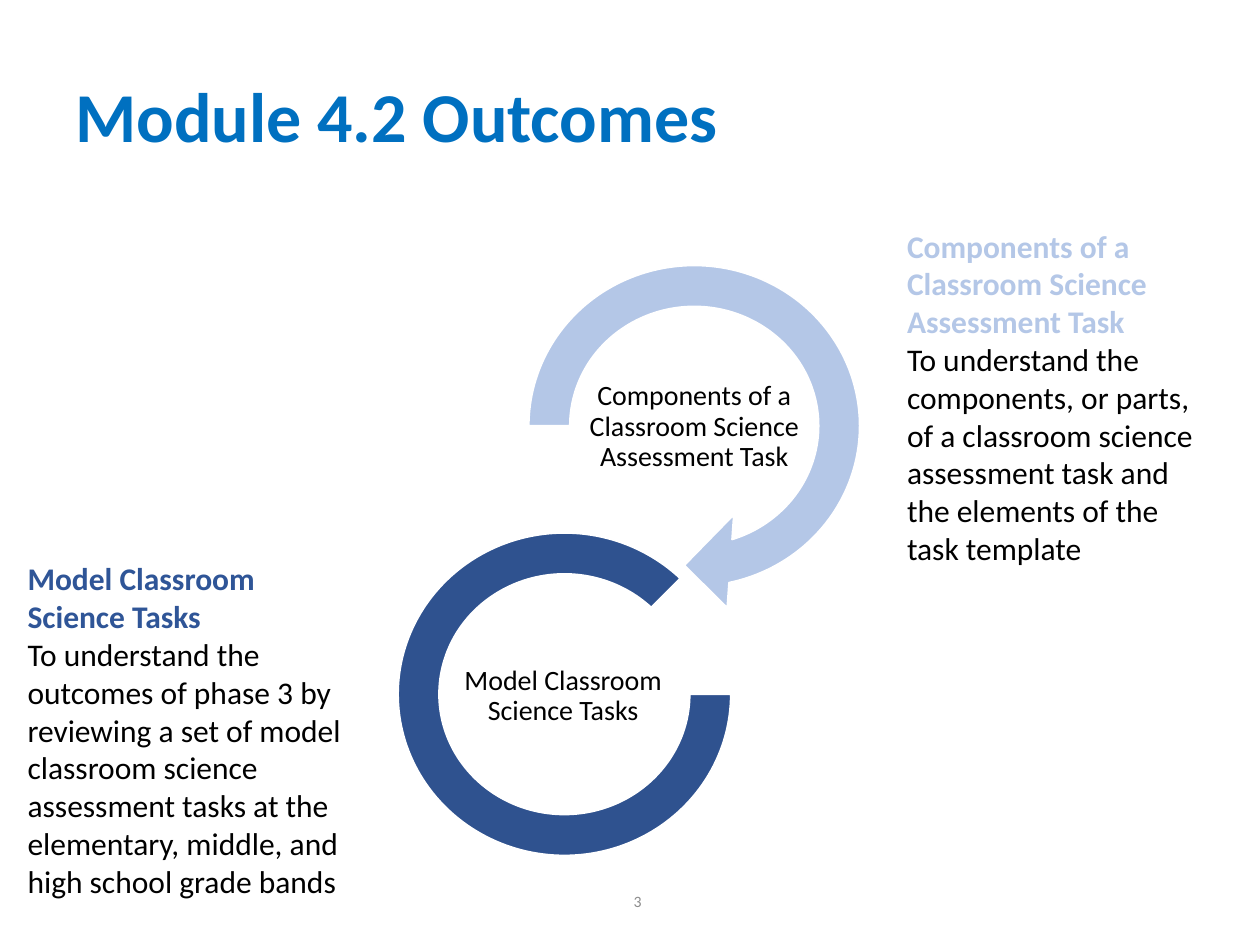
import pptx
import pptx.util
import pptx.dml.color
import pptx.enum.shapes
import pptx.enum.text

Inches, Pt = pptx.util.Inches, pptx.util.Pt
Shape = pptx.enum.shapes.MSO_SHAPE
Align = pptx.enum.text.PP_ALIGN
Anchor = pptx.enum.text.MSO_ANCHOR
WIDE, HIGH = 10, 7.5
PALE, DEEP, BLACK = "B4C7E7", "2F528F", "000000"


def color(code):
    return pptx.dml.color.RGBColor.from_string(code)


def place(box):
    return [Inches(n) for n in box]


def style(par, size, code, bold=False, align=Align.LEFT, lines=1):
    par.alignment, par.line_spacing = align, lines
    font = par.font
    font.name, font.size, font.bold = "Calibri", Pt(size), bold
    font.color.rgb = color(code)


def add_text(slide, box, anchor=Anchor.TOP, inset=None):
    frame = slide.shapes.add_textbox(*place(box)).text_frame
    frame.word_wrap = True
    frame.vertical_anchor = anchor
    if inset is not None:
        frame.margin_left = frame.margin_right = Inches(inset)
        frame.margin_top = frame.margin_bottom = Inches(inset)
    return frame


def add_title(slide, text):
    title = slide.shapes.title
    title.left, title.top, title.width, title.height = place(
        (0.05 * WIDE, 0.33, 0.9 * WIDE, HIGH / 6))
    frame = title.text_frame
    frame.text = text
    frame.auto_size = pptx.enum.text.MSO_AUTO_SIZE.NONE
    frame.vertical_anchor = Anchor.MIDDLE
    style(frame.paragraphs[0], 40, "0070C0", True, lines=0.9)


def add_ring(slide, kind, box, turns, fill):
    ring = slide.shapes.add_shape(kind, *place(box))
    ring.shadow.inherit = False
    for i, turn in enumerate(turns):
        ring.adjustments[i] = turn
    ring.fill.solid()
    ring.fill.fore_color.rgb = color(fill)
    ring.line.color.rgb = color("FFFFFF")
    ring.line.width = Pt(1)


def add_label(slide, left, top, text):
    frame = add_text(slide, (left, top, 2.08, 1.04), Anchor.MIDDLE, 0.01)
    frame.text = text
    style(frame.paragraphs[0], 16, BLACK, align=Align.CENTER, lines=0.9)


def add_note(slide, box, head, body, code):
    frame = add_text(slide, box)
    frame.text = head
    style(frame.paragraphs[0], 18, code, True)
    par = frame.add_paragraph()
    par.text = body
    style(par, 18, BLACK)


def add_number(slide, text):
    frame = add_text(slide, (2.94, 6.95, 2.25, 0.4), Anchor.MIDDLE)
    frame.text = text
    style(frame.paragraphs[0], 9, "8C8C8C", align=Align.RIGHT)


def main():
    deck = pptx.Presentation()
    deck.slide_width, deck.slide_height = Inches(WIDE), Inches(HIGH)
    slide = deck.slides.add_slide(deck.slide_layouts[5])
    parts = "Components of a Classroom Science Assessment Task"
    models = "Model Classroom Science Tasks"

    add_number(slide, "3")
    add_title(slide, "Module 4.2 Outcomes")

    # Linked rings with their labels; angles are in units of 5/3 degree... 
    add_ring(slide, Shape.CIRCULAR_ARROW, (3.99, 1.9, 3.04, 2.96),
             (0.11, 11.42, 45, 108, 0.125), PALE)
    add_label(slide, 4.47, 2.87, parts)
    add_ring(slide, Shape.BLOCK_ARC, (3.16, 4.23, 2.64, 2.56),
             (0, 189, 0.127), DEEP)
    add_label(slide, 3.43, 5.01, models)

    # Outcome notes beside the rings
    add_note(slide, (0.12, 4.39, 2.75, 3.13), models,
             "To understand the outcomes of phase 3 by reviewing a set of "
             "model classroom science assessment tasks at the elementary, "
             "middle, and high school grade bands", "2F5597")
    add_note(slide, (7.1, 1.75, 2.59, 3.13), parts,
             "To understand the components, or parts, of a classroom science "
             "assessment task and the elements of the task template", PALE)

    deck.save("out.pptx")


if __name__ == "__main__":
    main()
